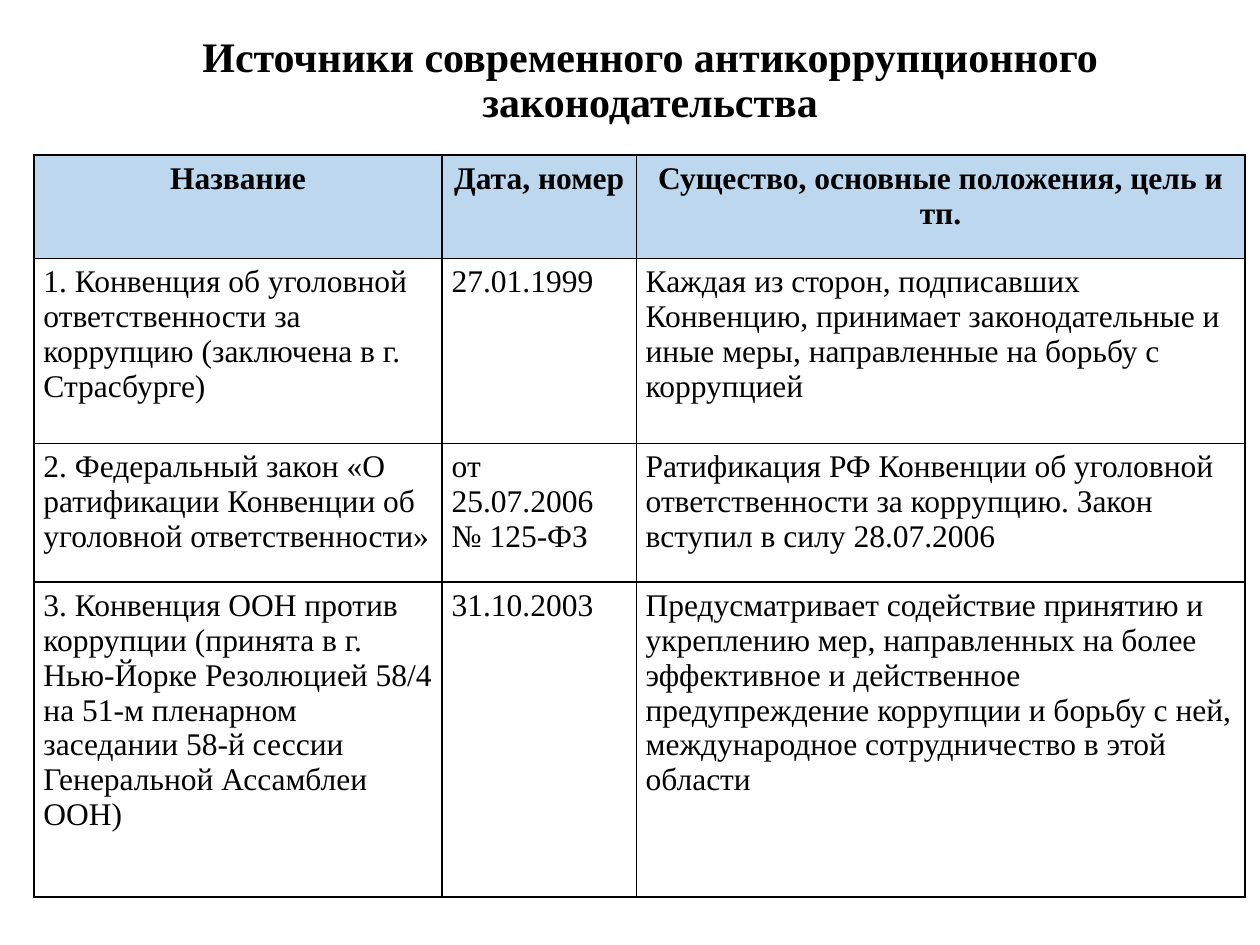
from lxml.etree import SubElement
from pptx import Presentation
from pptx.dml.color import RGBColor
from pptx.enum.text import MSO_ANCHOR, PP_ALIGN
from pptx.oxml.ns import qn
from pptx.util import Pt

TITLE = "Источники современного антикоррупционного законодательства"
COLUMN_WIDTHS = [233.28, 110.88, 347.76]
ROW_HEIGHTS = [59.04, 105.84, 79.2, 180]
HEADER = ["Название", "Дата, номер", "Существо, основные положения, цель и тп."]
SOURCES = [
    [
        "1. Конвенция об уголовной ответственности за коррупцию (заключена в г. Страсбурге)",
        "27.01.1999",
        "Каждая из сторон, подписавших Конвенцию, принимает законодательные и иные меры, "
        "направленные на борьбу с коррупцией",
    ],
    [
        "2. Федеральный закон «О ратификации Конвенции об уголовной ответственности»",
        "от 25.07.2006\n№ 125-ФЗ",
        "Ратификация РФ Конвенции об уголовной ответственности за коррупцию. "
        "Закон вступил в силу 28.07.2006",
    ],
    [
        "3. Конвенция ООН против коррупции (принята в г. Нью-Йорке Резолюцией 58/4\n"
        "на 51-м пленарном заседании 58-й сессии Генеральной Ассамблеи ООН)",
        "31.10.2003",
        "Предусматривает содействие принятию и укреплению мер, направленных на более "
        "эффективное и действенное предупреждение коррупции и борьбу с ней, "
        "международное сотрудничество в этой области",
    ],
]


def color(hex_value):
    return RGBColor.from_string(hex_value)


class SlideBuilder:
    font_name = "Times New Roman"
    ink = "000000"
    header_fill = "BDD7EE"

    def __init__(self, slide):
        self.slide = slide

    def set_text(self, frame, text, size, bold=False, align=PP_ALIGN.LEFT):
        """Fill a text frame, one paragraph for each line of text."""
        frame.text = text
        for para in frame.paragraphs:
            para.alignment = align
            para.font.name = self.font_name
            para.font.size = Pt(size)
            para.font.bold = bold
            para.font.color.rgb = color(self.ink)

    def title(self, text, left, top, width, height):
        box = self.slide.shapes.add_textbox(Pt(left), Pt(top), Pt(width), Pt(height))
        frame = box.text_frame
        frame.word_wrap = True
        frame.vertical_anchor = MSO_ANCHOR.MIDDLE
        self.set_text(frame, text, 24, bold=True, align=PP_ALIGN.CENTER)
        frame.paragraphs[0].line_spacing = 0.9

    def border(self, cell):
        properties = cell._tc.get_or_add_tcPr()
        for side in ("a:lnL", "a:lnR", "a:lnT", "a:lnB"):
            line = SubElement(properties, qn(side), w=str(Pt(1)))
            fill = SubElement(line, qn("a:solidFill"))
            SubElement(fill, qn("a:srgbClr"), val=self.ink)

    def cell(self, cell, text, is_header):
        cell.margin_left = cell.margin_right = Pt(5.4)
        cell.margin_top = cell.margin_bottom = Pt(3.6)
        self.border(cell)
        if is_header:
            cell.fill.solid()
            cell.fill.fore_color.rgb = color(self.header_fill)
        else:
            cell.fill.background()
        align = PP_ALIGN.CENTER if is_header else PP_ALIGN.LEFT
        self.set_text(cell.text_frame, text, 18, bold=is_header, align=align)

    def table(self, rows, left, top, widths, heights):
        frame = self.slide.shapes.add_table(
            len(rows), len(widths), Pt(left), Pt(top), Pt(sum(widths)), Pt(sum(heights))
        )
        table = frame.table
        table.first_row = table.horz_banding = False
        for column, width in zip(table.columns, widths):
            column.width = Pt(width)
        for index, (row, height, texts) in enumerate(zip(table.rows, heights, rows)):
            row.height = Pt(height)
            for cell, text in zip(row.cells, texts):
                self.cell(cell, text, is_header=index == 0)


def main():
    deck = Presentation()
    deck.slide_width, deck.slide_height = Pt(720), Pt(540)
    page = SlideBuilder(deck.slides.add_slide(deck.slide_layouts[6]))
    page.title(TITLE, 48.24, 15.12, 646.56, 62.64)
    page.table([HEADER, *SOURCES], 19.44, 88.56, COLUMN_WIDTHS, ROW_HEIGHTS)
    deck.save("out.pptx")


if __name__ == "__main__":
    main()
